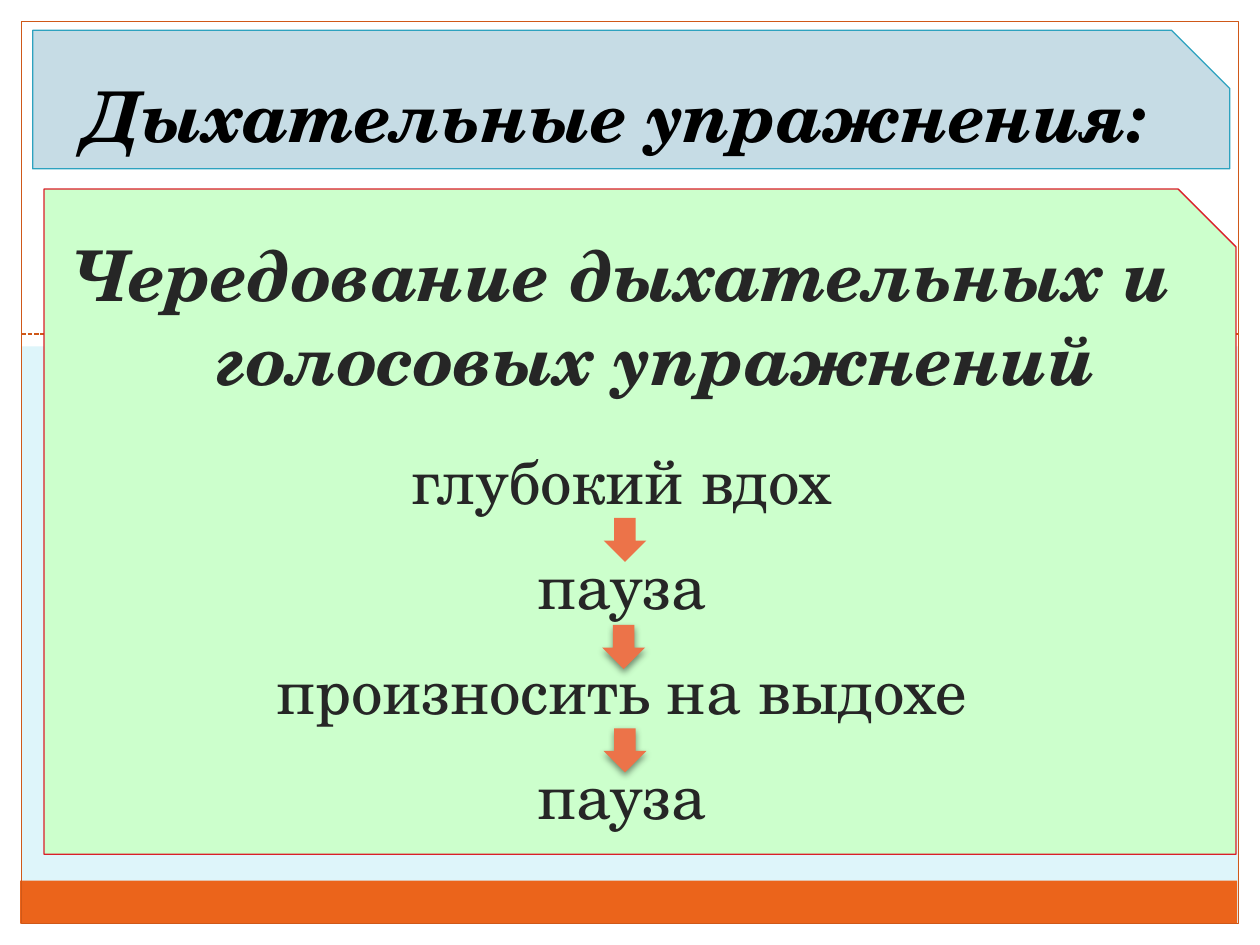
from lxml import etree
from pptx import Presentation
from pptx.dml.color import RGBColor
from pptx.enum.dml import MSO_LINE_DASH_STYLE as Dash
from pptx.enum.shapes import MSO_CONNECTOR, MSO_SHAPE as Shape
from pptx.enum.text import MSO_ANCHOR as Anchor, MSO_AUTO_SIZE as AutoSize, PP_ALIGN as Align
from pptx.oxml import parse_xml
from pptx.oxml.ns import nsdecls, qn
from pptx.util import Inches, Pt

FONT = "TeX Gyre Schola"
COLORS = {
    "background": "DEF5FA", "white": "FFFFFF", "band": "EB641B", "frame": "CF5818",
    "panel": "CCFFCC", "panel_line": "DA1F28", "header": "C6DCE5",
    "header_line": "2DA2BF", "title": "000000", "text": "262626", "arrow": "EC7349",
}
STEPS = ["глубокий вдох", "пауза", "произносить на выдохе", "пауза"]


def color(name):
    return RGBColor.from_string(COLORS[name])


def add_block(page, kind, place, fill=None, line=None, snip=None):
    block = page.shapes.add_shape(kind, *map(Inches, place))
    block.shadow.inherit = False
    if snip is not None:
        block.adjustments[0] = snip
    if fill:
        block.fill.solid()
        block.fill.fore_color.rgb = color(fill)
    else:
        block.fill.background()
    if line:
        block.line.color.rgb = color(line)
        block.line.width = Pt(0.75)
    else:
        block.line.fill.background()
    return block


def add_dashed_line(page, left, right, top):
    line = page.shapes.add_connector(
        MSO_CONNECTOR.STRAIGHT, Inches(left), Inches(top), Inches(right), Inches(top))
    line.line.color.rgb = color("frame")
    line.line.width = Pt(0.9)
    line.line.dash_style = Dash.SQUARE_DOT
    properties = line.element.find(qn("p:spPr"))
    etree.SubElement(properties, qn("a:effectLst"))


def add_arrow(page, left, top, shadow):
    arrow = add_block(page, Shape.DOWN_ARROW, (left, top, 0.34, 0.35), "arrow")
    if shadow:
        effects = arrow.element.spPr.find(qn("a:effectLst"))
        effects.append(parse_xml(
            f'<a:outerShdw {nsdecls("a")} blurRad="{Pt(4)}" dist="{Pt(2)}" '
            'dir="5400000" rotWithShape="0"><a:srgbClr val="000000">'
            '<a:alpha val="45000"/></a:srgbClr></a:outerShdw>'))


def place_text(page, box, place, anchor):
    """Move a placeholder in front of the blocks drawn so far."""
    box.left, box.top, box.width, box.height = map(Inches, place)
    page.shapes.element.append(box.element)
    frame = box.text_frame
    frame.word_wrap = True
    frame.auto_size = AutoSize.NONE
    frame.vertical_anchor = anchor
    return frame


def write(para, text, size, ink, strong=False, before=0):
    para.alignment = Align.CENTER
    para.space_before = Pt(before)
    span = para.add_run()
    span.text = text
    span.font.name = FONT
    span.font.size = Pt(size)
    span.font.bold = span.font.italic = strong
    span.font.color.rgb = color(ink)


def hang(para):
    """Hanging indent without a bullet."""
    properties = para._p.get_or_add_pPr()
    properties.set("marL", str(Inches(0.56)))
    properties.set("indent", str(Inches(-0.56)))
    etree.SubElement(properties, qn("a:buNone"))


def add_backdrop(page):
    page.background.fill.solid()
    page.background.fill.fore_color.rgb = color("background")
    for place in [(0, 7.33, 10, 0.17), (9.83, 0, 0.17, 7.5),
                  (0, 0, 0.17, 7.5), (0, 0, 10, 2.75)]:
        add_block(page, Shape.RECTANGLE, place, "white")
    add_block(page, Shape.RECTANGLE, (0.16, 6.99, 9.66, 0.34), "band")
    add_dashed_line(page, 0.17, 9.83, 2.65)
    add_block(page, Shape.RECTANGLE, (0.17, 0.17, 9.66, 7.16), line="frame")


def main():
    deck = Presentation()
    deck.slide_width, deck.slide_height = Inches(10), Inches(7.5)
    page = deck.slides.add_slide(deck.slide_layouts[1])
    title, body = page.placeholders
    add_backdrop(page)

    # Panels
    add_block(page, Shape.SNIP_1_RECTANGLE, (0.35, 1.5, 9.46, 5.28),
              "panel", "panel_line", 0.087)
    add_block(page, Shape.SNIP_1_RECTANGLE, (0.26, 0.24, 9.5, 1.1),
              "header", "header_line", 0.42)

    # Title
    frame = place_text(page, title, (0.26, 0.47, 9.27, 0.87), Anchor.MIDDLE)
    write(frame.paragraphs[0], "Дыхательные упражнения:", 40, "title", strong=True)

    # Exercise steps
    frame = place_text(page, body, (0.26, 1.79, 9.35, 4.95), Anchor.TOP)
    write(frame.paragraphs[0], "Чередование дыхательных и голосовых упражнений",
          40, "text", strong=True)
    for index, step in enumerate(STEPS):
        write(frame.add_paragraph(), step, 36, "text", before=16.8 if index else 24)
    for para in frame.paragraphs:
        hang(para)

    # Arrows between the steps
    for left, top, shadow in [(4.79, 4.11, False), (4.78, 4.96, True), (4.79, 5.78, True)]:
        add_arrow(page, left, top, shadow)

    deck.save("out.pptx")


if __name__ == "__main__":
    main()
